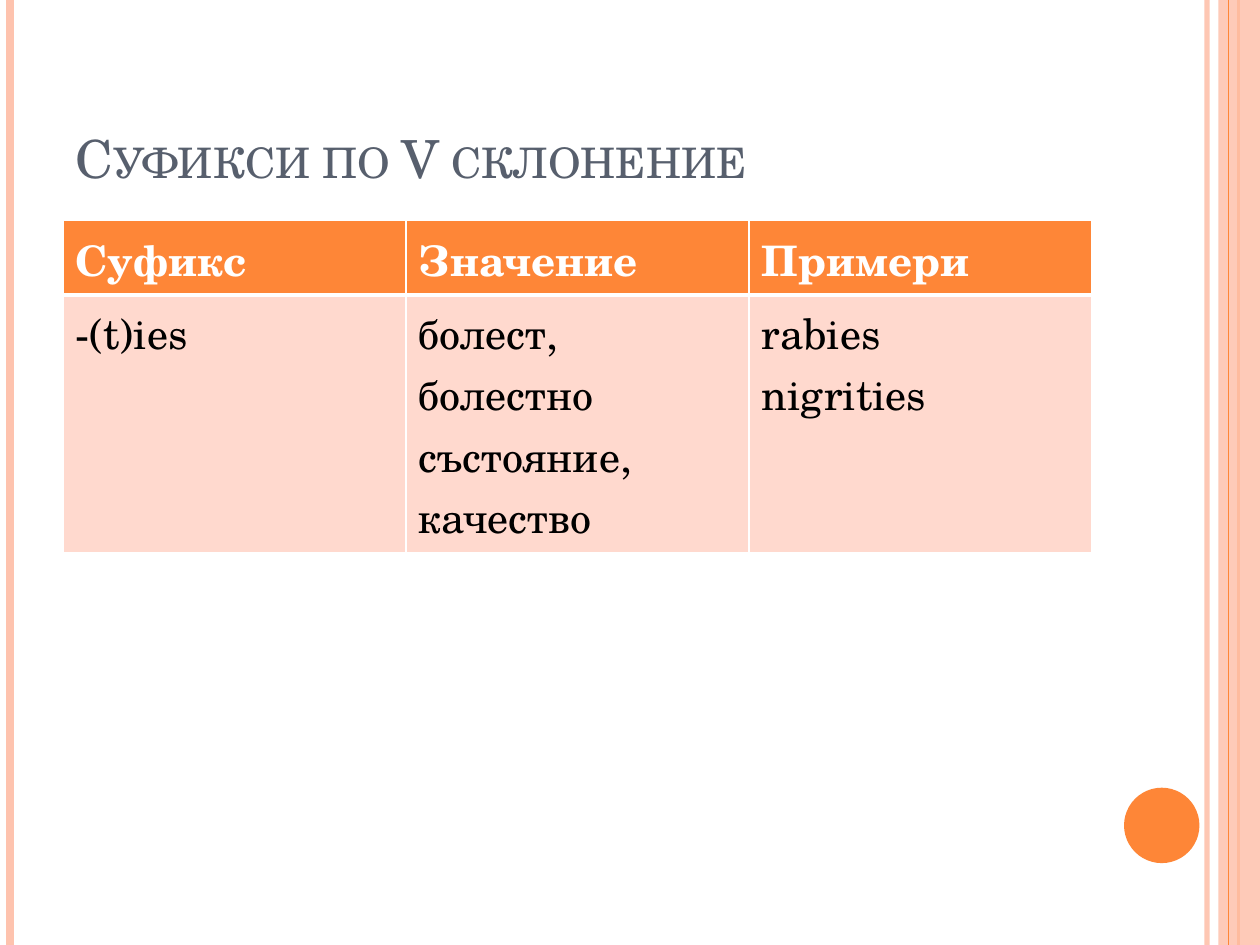
from dataclasses import dataclass

from lxml.etree import SubElement
from pptx import Presentation
from pptx.dml.color import RGBColor
from pptx.enum.shapes import MSO_CONNECTOR, MSO_SHAPE
from pptx.enum.text import MSO_ANCHOR
from pptx.oxml.ns import qn
from pptx.util import Cm, Pt


@dataclass(frozen=True)
class Theme:
    font: str = "TeX Gyre Schola"
    title_size: int = 30
    table_size: int = 24
    title: str = "575F6D"
    accent: str = "FE8637"
    stripe: str = "FEC3AE"
    body_fill: str = "FFD9CE"
    text: str = "000000"
    white: str = "FFFFFF"


WIDTH, HEIGHT = 25.4, 19.05
MARGIN, CONTENT_WIDTH = 1.27, 20.75


def set_alpha(fill_parent, percent):
    color = next(fill_parent.iter(qn("a:srgbClr")))
    SubElement(color, qn("a:alpha"), val=str(percent * 1000))


class SlideBuilder:
    def __init__(self, slide, theme):
        self.s = slide
        self.theme = theme

    def style(self, p, size, color, bold=False):
        p.font.name = self.theme.font
        p.font.size = Pt(size)
        p.font.bold = bold
        p.font.color.rgb = RGBColor.from_string(color)

    def vertical_line(self, x, color, width, alpha=None):
        line = self.s.shapes.add_connector(
            MSO_CONNECTOR.STRAIGHT, Cm(x), Cm(0), Cm(x), Cm(HEIGHT))
        line.line.color.rgb = RGBColor.from_string(color)
        line.line.width = Pt(width)
        spPr = line._element.spPr
        SubElement(spPr, qn("a:effectLst"))
        if alpha:
            set_alpha(spPr, alpha)

    def shape(self, kind, x, y, w, h, color, alpha=None):
        sp = self.s.shapes.add_shape(kind, Cm(x), Cm(y), Cm(w), Cm(h))
        sp.shadow.inherit = False
        sp.fill.solid()
        sp.fill.fore_color.rgb = RGBColor.from_string(color)
        sp.line.fill.background()
        if alpha:
            set_alpha(sp._element.spPr, alpha)

    def title(self, text, x, y, w, h):
        tf = self.s.shapes.add_textbox(Cm(x), Cm(y), Cm(w), Cm(h)).text_frame
        tf.word_wrap = True
        tf.vertical_anchor = MSO_ANCHOR.BOTTOM
        p = tf.paragraphs[0]
        self.style(p, self.theme.title_size, self.theme.title)
        r = p.add_run()
        r.text = text
        r._r.get_or_add_rPr().set("cap", "small")

    def border(self, cell, widths):
        """Draw cell borders; widths are in points: left, right, top, bottom."""
        tcPr = cell._tc.get_or_add_tcPr()
        for side, width in zip(("lnL", "lnR", "lnT", "lnB"), widths):
            ln = SubElement(tcPr, qn(f"a:{side}"), w=str(Pt(width)))
            fill = SubElement(ln, qn("a:solidFill"))
            SubElement(fill, qn("a:srgbClr"), val=self.theme.white)

    def table(self, rows, x, y, w, heights):
        t = self.theme
        table = self.s.shapes.add_table(
            len(rows), len(rows[0]), Cm(x), Cm(y), Cm(w), Cm(sum(heights))).table
        for i, (row, height) in enumerate(zip(rows, heights)):
            header = i == 0
            table.rows[i].height = Cm(height)
            for j, text in enumerate(row):
                cell = table.cell(i, j)
                self.border(cell, (1, 1, 1, 3) if header else (1, 1, 3, 1))
                cell.fill.solid()
                cell.fill.fore_color.rgb = RGBColor.from_string(
                    t.accent if header else t.body_fill)
                cell.text = text
                for p in cell.text_frame.paragraphs:
                    self.style(p, t.table_size, t.white if header else t.text, header)


def main():
    prs = Presentation()
    prs.slide_width, prs.slide_height = Cm(WIDTH), Cm(HEIGHT)
    theme = Theme()
    b = SlideBuilder(prs.slides.add_slide(prs.slide_layouts[6]), theme)

    b.vertical_line(24.33, theme.stripe, 3, alpha=93)
    b.vertical_line(0.2, theme.stripe, 4.5)
    b.vertical_line(24.97, theme.accent, 1.5)
    b.shape(MSO_SHAPE.RECTANGLE, 24.56, 0, 0.84, HEIGHT, theme.stripe, alpha=87)
    b.vertical_line(24.77, theme.accent, 0.75)
    b.shape(MSO_SHAPE.OVAL, 22.66, 15.88, 1.52, 1.52, theme.accent)

    b.title("Суфикси по V склонение", MARGIN, 0.76, CONTENT_WIDTH, 3.18)
    b.table(
        [("Суфикс", "Значение", "Примери"),
         ("-(t)ies", "болест, болестно състояние, качество", "rabies\nnigrities")],
        MARGIN, 4.45, CONTENT_WIDTH, heights=(1.5, 5.2))
    prs.save("out.pptx")


if __name__ == "__main__":
    main()
